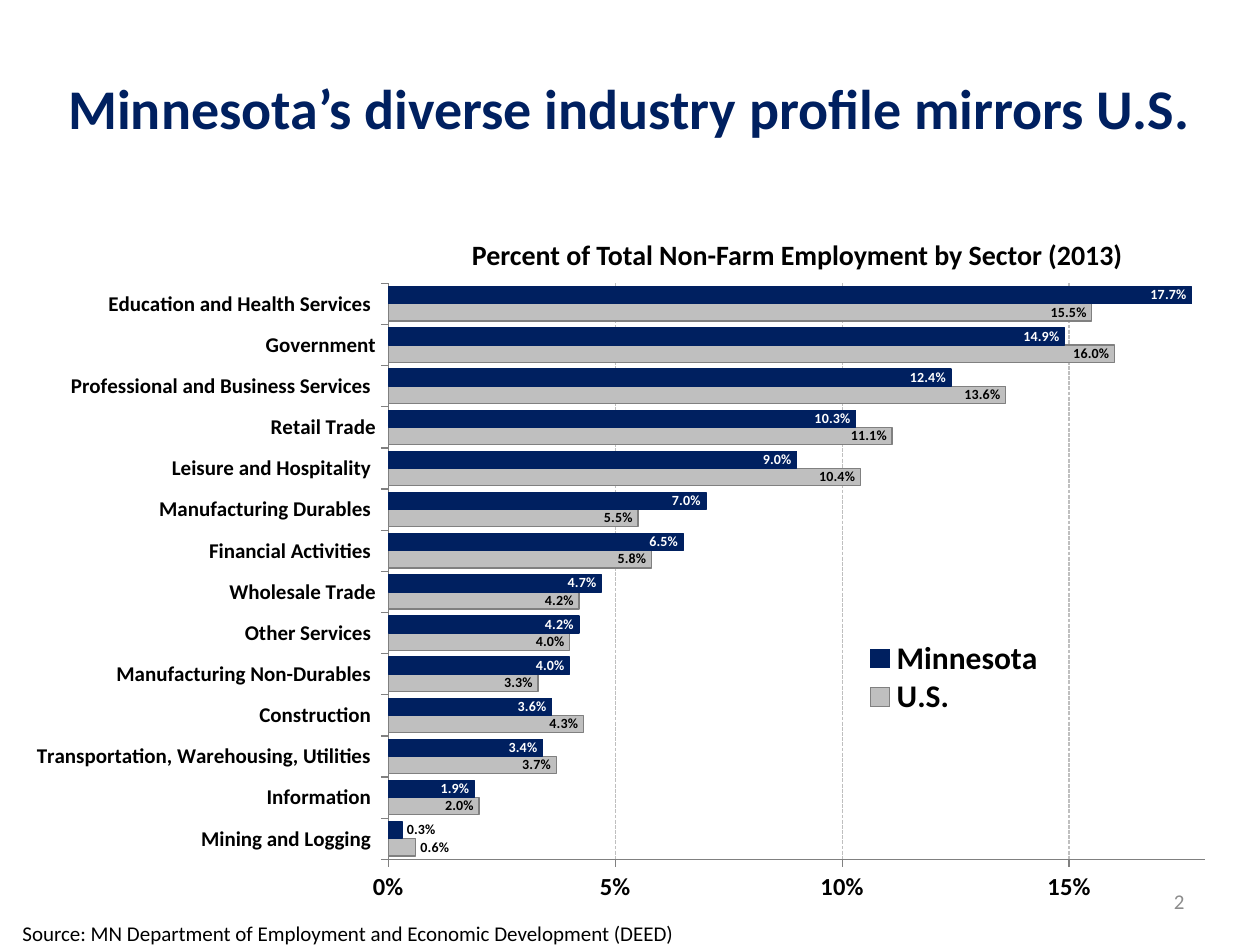
import pptx
import pptx.chart.data
import pptx.dml.color
import pptx.enum.chart
import pptx.enum.dml
import pptx.enum.text
import pptx.oxml
import pptx.util

EMU_PER_PX = 914400 / 126
FONT = "Calibri"
NAVY, GRAY, SILVER, BLACK, WHITE = "002060", "808080", "BFBFBF", "000000", "FFFFFF"
ALIGN = pptx.enum.text.PP_ALIGN
ANCHOR = pptx.enum.text.MSO_ANCHOR
LABEL = pptx.enum.chart.XL_LABEL_POSITION
TICK = pptx.enum.chart.XL_TICK_MARK

# Sector, U.S. share, Minnesota share (percent), from the bottom bar up
SECTORS = [
    ("Mining and Logging ", 0.6, 0.3),
    ("Information ", 2.0, 1.9),
    ("Transportation, Warehousing, Utilities ", 3.7, 3.4),
    ("Construction ", 4.3, 3.6),
    ("Manufacturing Non-Durables ", 3.3, 4.0),
    ("Other Services ", 4.0, 4.2),
    ("Wholesale Trade", 4.2, 4.7),
    ("Financial Activities ", 5.8, 6.5),
    ("Manufacturing Durables ", 5.5, 7.0),
    ("Leisure and Hospitality ", 10.4, 9.0),
    ("Retail Trade", 11.1, 10.3),
    ("Professional and Business Services ", 13.6, 12.4),
    ("Government", 16.0, 14.9),
    ("Education and Health Services ", 15.5, 17.7),
]


def px(length):
    return pptx.util.Emu(round(length * EMU_PER_PX))


def rgb(value):
    return pptx.dml.color.RGBColor.from_string(value)


def apply(target, **values):
    for name, value in values.items():
        setattr(target, name, value)


def set_font(font, size, color=BLACK, bold=False):
    apply(font, name=FONT, size=pptx.util.Pt(size), bold=bold)
    font.color.rgb = rgb(color)


def set_line(line, color):
    line.color.rgb = rgb(color)
    line.width = pptx.util.Pt(0.75)


def set_layout(parent, position, **values):
    """Place a plot area or legend by fractions of the chart."""
    for old in parent.findall(pptx.oxml.ns.qn("c:layout")):
        parent.remove(old)
    tags = "".join(f'<c:{tag} val="{value}"/>' for tag, value in values.items())
    layout = pptx.oxml.parse_xml(
        f'<c:layout {pptx.oxml.ns.nsdecls("c")}>'
        f"<c:manualLayout>{tags}</c:manualLayout></c:layout>")
    parent.insert(position, layout)


class SlideBuilder:
    """Holds the slide and adds its elements in one style."""

    def __init__(self, slide):
        self.slide = slide

    def text(self, box, text, size, color=BLACK, bold=False,
             align=ALIGN.LEFT, anchor=ANCHOR.TOP):
        frame = self.slide.shapes.add_textbox(*map(px, box)).text_frame
        apply(frame, word_wrap=True, vertical_anchor=anchor)
        paragraph = frame.paragraphs[0]
        paragraph.alignment = align
        run = paragraph.add_run()
        run.text = text
        set_font(run.font, size, color, bold)

    def bar_chart(self, box, sectors):
        data = pptx.chart.data.CategoryChartData(number_format="0.0%")
        names, us_shares, minnesota_shares = zip(*sectors)
        data.categories = names
        for name, shares in (("U.S.", us_shares), ("Minnesota", minnesota_shares)):
            data.add_series(name, [round(share / 100, 3) for share in shares])
        chart = self.slide.shapes.add_chart(
            pptx.enum.chart.XL_CHART_TYPE.BAR_CLUSTERED, *map(px, box), data).chart
        chart.has_title = False
        set_font(chart.font, 10)
        plot = chart.plots[0]
        apply(plot, gap_width=40, overlap=0, vary_by_categories=False)
        plot_area = plot._element.getparent()
        set_layout(plot_area, 0, layoutTarget="inner", xMode="edge", yMode="edge",
                   x=0.296, y=0.01, w=0.677, h=0.906)
        styles = [(SILVER, GRAY, BLACK), (NAVY, NAVY, WHITE)]
        for series, style in zip(plot.series, styles):
            self.style_series(series, *style)
        self.style_axes(chart)
        self.style_legend(chart)

    def style_series(self, series, fill, line, label_color):
        series.invert_if_negative = False
        series.format.fill.solid()
        series.format.fill.fore_color.rgb = rgb(fill)
        set_line(series.format.line, line)
        labels = series.data_labels
        apply(labels, show_value=True, position=LABEL.INSIDE_END,
              number_format="0.0%", number_format_is_linked=False)
        set_font(labels.font, 8, label_color, True)
        # The shortest bar has no room for its label inside
        label = series.points[0].data_label
        set_font(label.font, 8, BLACK, True)
        label.position = LABEL.OUTSIDE_END

    def style_axes(self, chart):
        for axis, size in ((chart.category_axis, 12), (chart.value_axis, 14)):
            apply(axis, major_tick_mark=TICK.OUTSIDE, minor_tick_mark=TICK.NONE)
            set_font(axis.tick_labels.font, size, bold=True)
            set_line(axis.format.line, GRAY)
        axis = chart.value_axis
        apply(axis, minimum_scale=0, maximum_scale=0.18, major_unit=0.05,
              has_major_gridlines=True,
              tick_label_position=pptx.enum.chart.XL_TICK_LABEL_POSITION.LOW)
        apply(axis.tick_labels, number_format="0%", number_format_is_linked=False)
        gridline = axis.major_gridlines.format.line
        set_line(gridline, SILVER)
        gridline.dash_style = pptx.enum.dml.MSO_LINE.SQUARE_DOT

    def style_legend(self, chart):
        chart.has_legend = True
        legend = chart.legend
        apply(legend, include_in_layout=False,
              position=pptx.enum.chart.XL_LEGEND_POSITION.RIGHT)
        set_font(legend.font, 18, bold=True)
        set_layout(legend._element, 1, xMode="edge", yMode="edge",
                   x=0.69, y=0.57, w=0.15, h=0.12)


def main():
    presentation = pptx.Presentation()
    apply(presentation, slide_width=px(1260), slide_height=px(945))
    builder = SlideBuilder(presentation.slides.add_slide(presentation.slide_layouts[6]))
    builder.text((388, 231, 819, 47),
                 "Percent of Total Non-Farm Employment by Sector (2013)",
                 16, bold=True, align=ALIGN.CENTER)
    builder.text((31, 21, 1197, 126),
                 "Minnesota’s diverse industry profile mirrors U.S.",
                 32, NAVY, True, ALIGN.CENTER, ANCHOR.BOTTOM)
    builder.bar_chart((31, 277, 1207, 636), SECTORS)
    builder.text((10, 914, 963, 20),
                 "Source: MN Department of Employment and Economic Development (DEED)", 12)
    builder.text((903, 876, 294, 50), "2", 12, "8C8C8C",
                 align=ALIGN.RIGHT, anchor=ANCHOR.MIDDLE)
    presentation.save("out.pptx")


if __name__ == "__main__":
    main()
